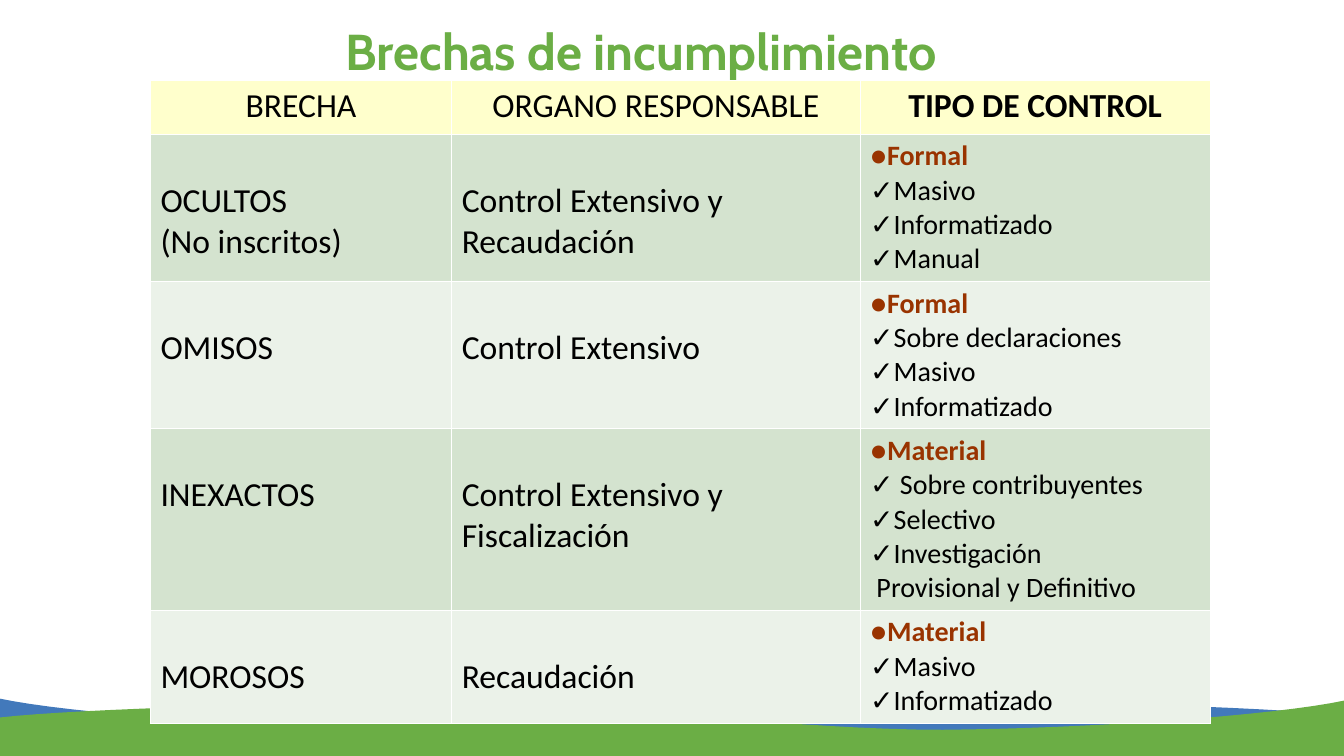
import lxml.etree
import pptx
import pptx.dml.color
import pptx.enum.text
import pptx.oxml
import pptx.oxml.ns
import pptx.util
from pptx.util import Cm

GREEN, BLUE, BLACK, WHITE = "6BAE45", "4279BB", "000000", "FFFFFF"
HEADER_FILL, HEADING_COLOR = "FFFFCC", "993300"
BAND_FILLS = ["D4E3CF", "EBF2E9"]

SLIDE_WIDTH, SLIDE_HEIGHT = 33.86, 19.05
WAVE_START = (33.86, 18.03)
WAVE_CURVES = [
    [(31.9, 17.81), (26.06, 17.63), (22.1, 17.68)],
    [(18.16, 17.73), (13.79, 18.34), (10.11, 18.34)],
    [(6.43, 18.31), (1.73, 17.98), (-0.03, 17.6)],
]

COLUMN_WIDTHS = [7.59, 10.29, 8.82]
ROW_HEIGHTS = [1.36, 3.35, 3.1, 3.66, 2.34]
HEADERS = ["BRECHA", "ORGANO RESPONSABLE", "TIPO DE CONTROL"]
GAPS = [
    (["OCULTOS", "(No inscritos)"], "Control Extensivo y Recaudación",
     ["●Formal", "✓Masivo", "✓Informatizado", "✓Manual"]),
    (["OMISOS"], "Control Extensivo",
     ["●Formal", "✓Sobre declaraciones", "✓Masivo", "✓Informatizado"]),
    (["INEXACTOS"], "Control Extensivo y Fiscalización",
     ["●Material", "✓ Sobre contribuyentes", "✓Selectivo", "✓Investigación",
      " Provisional y Definitivo"]),
    (["MOROSOS"], "Recaudación",
     ["●Material", "✓Masivo", "✓Informatizado"]),
]


def color(hex_string):
    return pptx.dml.color.RGBColor.from_string(hex_string)


def bezier_points(start, first, second, end, steps=16):
    """Return points along a cubic curve, without its start."""
    points = []
    for step in range(1, steps + 1):
        t = step / steps
        weights = [(1 - t) ** 3, 3 * t * (1 - t) ** 2, 3 * t * t * (1 - t), t ** 3]
        points.append(tuple(
            sum(weight * value for weight, value in zip(weights, values))
            for values in zip(start, first, second, end)))
    return points


def wave_outline():
    outline = [WAVE_START]
    for curve in WAVE_CURVES:
        outline += bezier_points(outline[-1], *curve)
    return outline + [(-0.03, SLIDE_HEIGHT), (SLIDE_WIDTH, SLIDE_HEIGHT)]


class SlideBuilder:
    """Holds the fonts and the slide being drawn."""

    title_font, body_font = "Cabin", "Calibri"
    body_size, list_size = 24, 20

    def __init__(self, slide):
        self.slide = slide

    def style(self, paragraph, size, hex_string=BLACK, bold=False, font_name=None):
        font = paragraph.font
        font.name = font_name or self.body_font
        font.size = pptx.util.Pt(size)
        font.bold = bold
        font.color.rgb = color(hex_string)

    def add_wave(self, points, fill):
        corners = [(Cm(x), Cm(y)) for x, y in points]
        builder = self.slide.shapes.build_freeform(*corners[0])
        builder.add_line_segments(corners[1:], close=True)
        shape = builder.convert_to_shape()
        shape.shadow.inherit = False
        shape.fill.solid()
        shape.fill.fore_color.rgb = color(fill)
        shape.line.fill.background()

    def set_title(self, text):
        title = self.slide.shapes.title
        title.left, title.top = Cm(8.45), Cm(0.18)
        title.width, title.height = Cm(19.91), Cm(2.36)
        title.text_frame.text = text
        title.text_frame.vertical_anchor = pptx.enum.text.MSO_ANCHOR.MIDDLE
        paragraph = title.text_frame.paragraphs[0]
        paragraph.alignment = pptx.enum.text.PP_ALIGN.LEFT
        paragraph.line_spacing = 0.9
        self.style(paragraph, 36, GREEN, True, self.title_font)

    def add_table(self, left, top, column_widths, row_heights):
        frame = self.slide.shapes.add_table(
            len(row_heights), len(column_widths), Cm(left), Cm(top),
            Cm(sum(column_widths)), Cm(sum(row_heights)))
        table = frame.table
        table.horz_banding = False
        for column, width in zip(table.columns, column_widths):
            column.width = Cm(width)
        for row, height in zip(table.rows, row_heights):
            row.height = Cm(height)
        return table

    def fill_cell(self, cell, lines, fill):
        """Write the lines and give the cell its fill and white borders."""
        cell.text = "\n".join(lines)
        cell.fill.solid()
        cell.fill.fore_color.rgb = color(fill)
        properties = cell._tc.get_or_add_tcPr()
        for position, side in enumerate("LRTB"):
            border = pptx.oxml.parse_xml(
                f'<a:ln{side} {pptx.oxml.ns.nsdecls("a")} w="12700"><a:solidFill>'
                f'<a:srgbClr val="{WHITE}"/></a:solidFill></a:ln{side}>')
            properties.insert(position, border)
        return cell.text_frame.paragraphs

    def add_header(self, cell, text, bold):
        paragraph = self.fill_cell(cell, [text], HEADER_FILL)[0]
        paragraph.alignment = pptx.enum.text.PP_ALIGN.CENTER
        self.style(paragraph, self.body_size, bold=bold)

    def add_text(self, cell, lines, fill):
        cell.margin_top = Cm(1.16)
        for paragraph in self.fill_cell(cell, lines, fill):
            self.style(paragraph, self.body_size)

    def set_bullet(self, paragraph, character):
        properties = paragraph._p.get_or_add_pPr()
        properties.set("marL", "0")
        properties.set("indent", "0")
        qn = pptx.oxml.ns.qn
        properties.insert(0, lxml.etree.Element(qn("a:buFont"), typeface=self.body_font))
        properties.insert(1, lxml.etree.Element(qn("a:buChar"), char=character))

    def add_list(self, cell, lines, fill):
        """Write a list whose lines may start with their bullet."""
        paragraphs = self.fill_cell(cell, [line.lstrip("●✓") for line in lines], fill)
        for paragraph, line in zip(paragraphs, lines):
            heading = line.startswith("●")
            self.style(paragraph, self.list_size,
                       HEADING_COLOR if heading else BLACK, heading)
            if line[0] in "●✓":
                self.set_bullet(paragraph, line[0])


def main():
    presentation = pptx.Presentation()
    presentation.slide_width = Cm(SLIDE_WIDTH)
    presentation.slide_height = Cm(SLIDE_HEIGHT)
    title_only = presentation.slide_layouts[5]
    builder = SlideBuilder(presentation.slides.add_slide(title_only))

    wave = wave_outline()
    builder.add_wave(wave, BLUE)
    builder.add_wave([(SLIDE_WIDTH - x, y + 0.05) for x, y in wave], GREEN)
    builder.set_title("Brechas de incumplimiento")

    table = builder.add_table(3.79, 2.02, COLUMN_WIDTHS, ROW_HEIGHTS)
    for column, header in enumerate(HEADERS):
        builder.add_header(table.cell(0, column), header, bold=column == 2)
    for row, (gap, office, controls) in enumerate(GAPS, start=1):
        fill = BAND_FILLS[(row - 1) % 2]
        builder.add_text(table.cell(row, 0), gap, fill)
        builder.add_text(table.cell(row, 1), [office], fill)
        builder.add_list(table.cell(row, 2), controls, fill)

    presentation.save("out.pptx")


if __name__ == "__main__":
    main()
